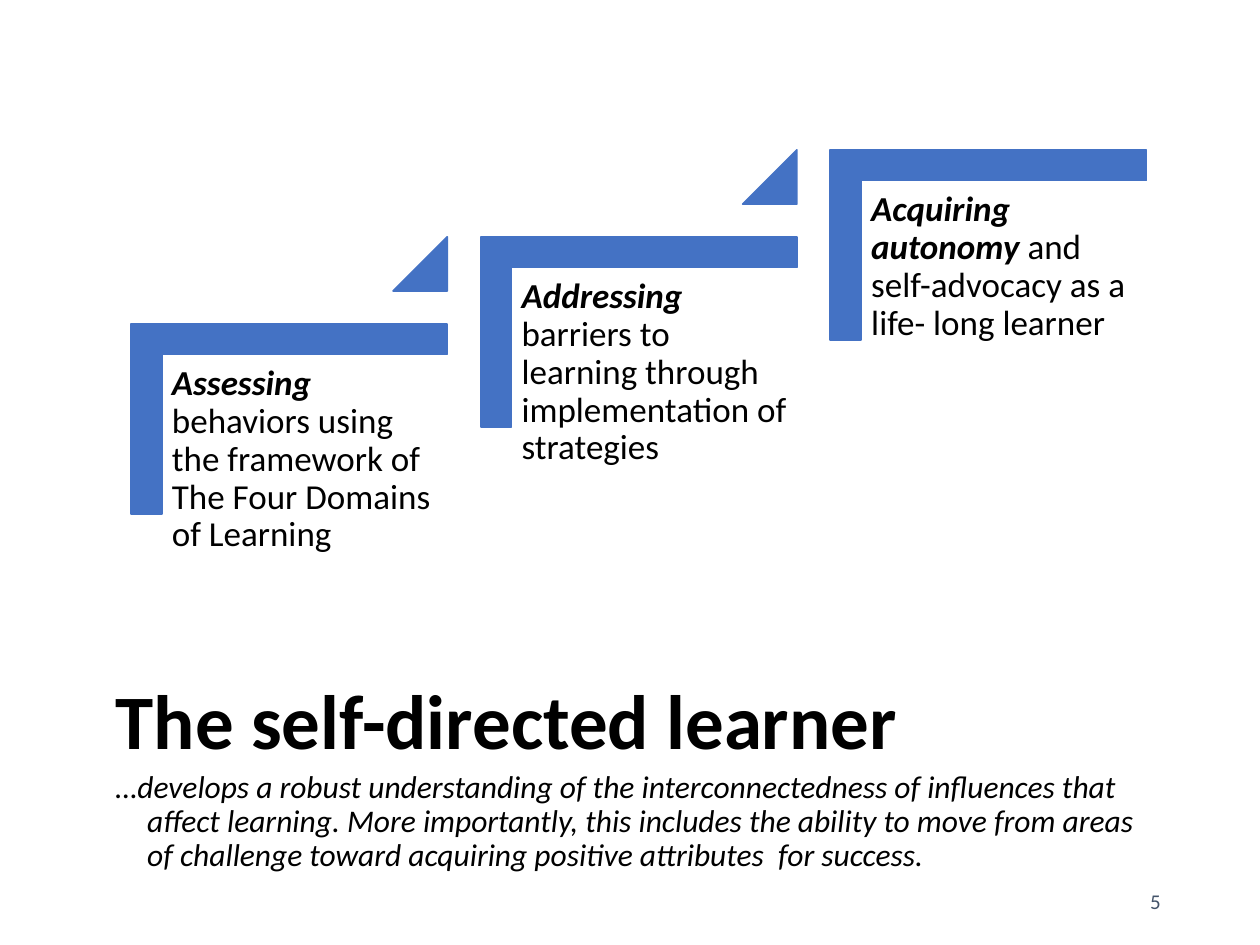
from pptx import Presentation
from pptx import util as u
from pptx.dml.color import RGBColor
from pptx.enum import shapes, text

COLORS = {"step": "4472C4", "text": "000000", "number": "44546A"}
FONT = "Calibri"

# The slide is a grid of 100 columns and 75 rows; boxes are (left, top, width, height)
COLUMNS, ROWS = 100, 75
WIDTH, HEIGHT = u.Inches(10), u.Inches(7.5)

STEPS = [
    ("Assessing", " behaviors using the framework of The Four Domains of Learning"),
    ("Addressing", " barriers to learning through implementation of strategies"),
    ("Acquiring autonomy ", "and self-advocacy as a life- long learner"),
]
STATEMENT = (
    "…develops a robust understanding of the interconnectedness of influences that "
    "affect learning. More importantly, this includes the ability to move from areas "
    "of challenge toward acquiring positive attributes  for success."
)


def to_lengths(box):
    left, top, width, height = box
    return (
        round(WIDTH * left / COLUMNS), round(HEIGHT * top / ROWS),
        round(WIDTH * width / COLUMNS), round(HEIGHT * height / ROWS),
    )


def add_text(slide, box, runs, size, color="text", margins=(1, 0.5, 1, 0.5),
             anchor=text.MSO_ANCHOR.TOP, spacing=0.9):
    """Add a one-paragraph text box; runs are (wording, bold, italic)."""
    text_frame = slide.shapes.add_textbox(*to_lengths(box)).text_frame
    text_frame.word_wrap = True
    text_frame.vertical_anchor = anchor
    (text_frame.margin_left, text_frame.margin_top,
     text_frame.margin_right, text_frame.margin_bottom) = to_lengths(margins)
    paragraph = text_frame.paragraphs[0]
    paragraph.line_spacing = spacing
    for wording, bold, italic in runs:
        run = paragraph.add_run()
        run.text = wording
        font = run.font
        font.name, font.size = FONT, u.Pt(size)
        font.bold, font.italic = bold, italic
        font.color.rgb = RGBColor.from_string(COLORS[color])
    return paragraph


def add_step_shape(slide, kind, box, adjustments):
    shape = slide.shapes.add_shape(kind, *to_lengths(box))
    shape.shadow.inherit = False
    for index, value in enumerate(adjustments):
        shape.adjustments[index] = value
    color = RGBColor.from_string(COLORS["step"])
    shape.fill.solid()
    shape.fill.fore_color.rgb = color
    shape.line.color.rgb = color
    shape.line.width = u.Pt(1)
    return shape


def add_step(slide, box, rise, lead, rest, has_next):
    left, top, width, height = box
    # Bracket: a corner turned a quarter, so its sides swap around the box centre
    turned = (left + (width - height) / 2, top - (width - height) / 2, height, width)
    corner = add_step_shape(slide, shapes.MSO_SHAPE.CORNER, turned, (0.161, 0.161))
    corner.rotation = 90
    # Wording inside the bracket
    add_text(slide, (left + 2.45, top + 2.5, 22.7, 19.9),
             [(lead, True, True), (rest, False, False)], 20, margins=(0.8,) * 4)
    # Triangle leading up to the next step
    if has_next:
        side = 4.3
        add_step_shape(slide, shapes.MSO_SHAPE.ISOSCELES_TRIANGLE,
                       (left + width - side, top - rise, side, side), (1,))


def add_staircase(slide, box):
    left, top, width, height = box
    step_width, step_height = 25.1, 15.1
    last = len(STEPS) - 1
    run = (width - step_width) / last
    rise = (height - step_height) / last
    for index, (lead, rest) in enumerate(STEPS):
        step_box = (left + index * run, top + (last - index) * rise,
                    step_width, step_height)
        add_step(slide, step_box, rise, lead, rest, index < last)


def add_caption(slide, box):
    left, top, width, height = box
    title_height = 10.8
    # Title
    add_text(slide, (left, top, width, title_height),
             [("The self-directed learner", True, False)], 44,
             margins=(1, 0.5, 1, 0), anchor=text.MSO_ANCHOR.BOTTOM)
    # Statement with a hanging indent
    body_top = title_height + 0.4
    paragraph = add_text(slide, (left, top + body_top, width, height - body_top),
                         [(STATEMENT, False, True)], 18, margins=(1, 0, 1, 0.5))
    properties = paragraph._p.get_or_add_pPr()
    properties.set("marL", str(u.Inches(0.25)))
    properties.set("indent", str(u.Inches(-0.25)))


def add_page_number(slide, box):
    paragraph = add_text(slide, box, [("5", False, False)], 12, "number",
                         anchor=text.MSO_ANCHOR.MIDDLE, spacing=1.0)
    paragraph.alignment = text.PP_ALIGN.RIGHT


def main():
    presentation = Presentation()
    presentation.slide_width, presentation.slide_height = WIDTH, HEIGHT
    slide = presentation.slides.add_slide(presentation.slide_layouts[6])
    add_caption(slide, (8.2, 50, 85.1, 20.4))
    add_page_number(slide, (70.6, 69.5, 22.5, 4))
    add_staircase(slide, (10.4, 11.9, 80.6, 28.9))
    presentation.save("out.pptx")


if __name__ == "__main__":
    main()
